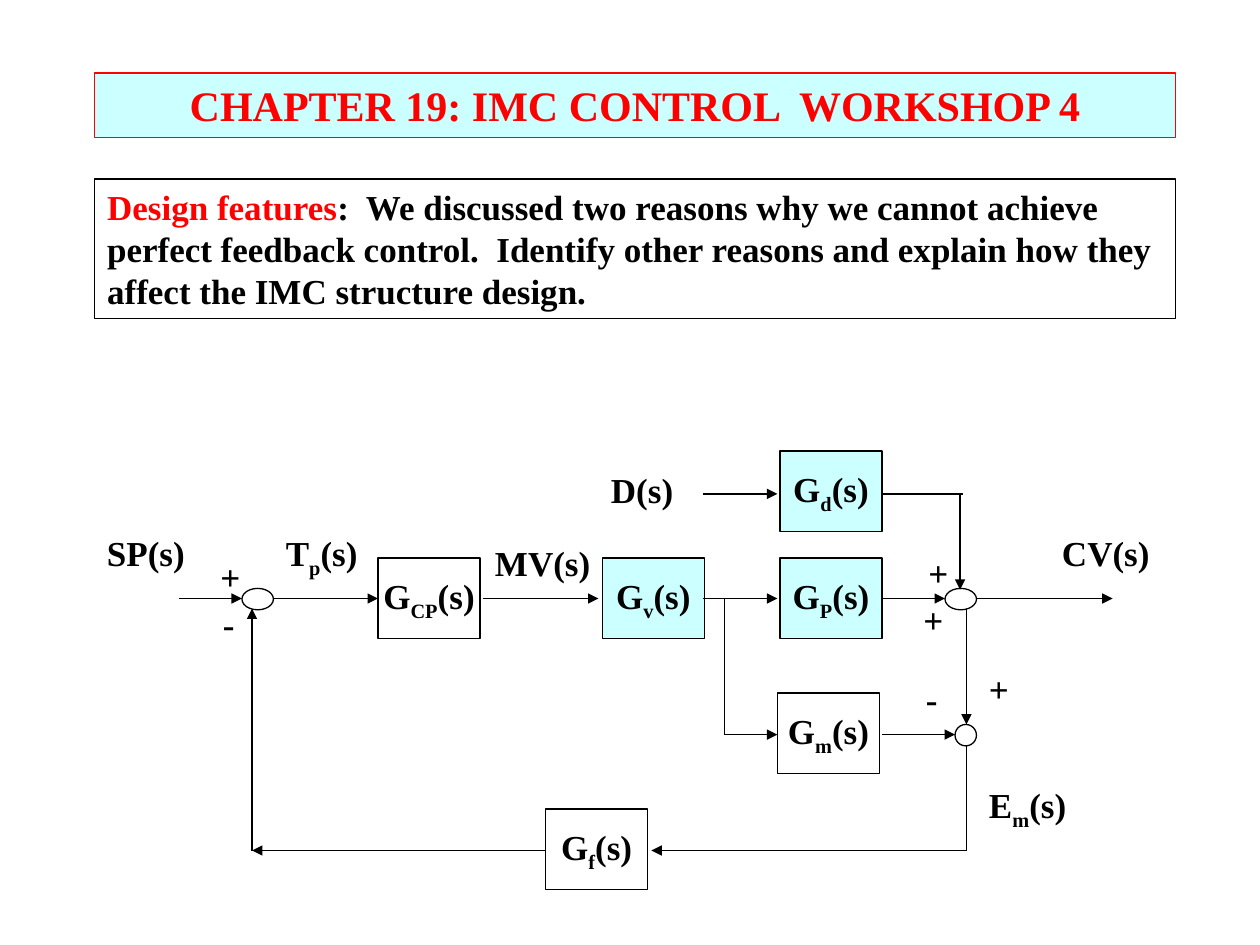
from lxml import etree
from pptx import Presentation
from pptx import util as u
from pptx.dml.color import RGBColor
from pptx.enum import shapes, text
from pptx.oxml.ns import qn

COLORS = {"red": "FF0000", "black": "000000", "aqua": "CCFFFF"}
BOX_WIDTH, BOX_HEIGHT = 0.81, 0.64
SIGNAL_Y, DISTURBANCE_Y, MODEL_Y, FEEDBACK_Y = 4.75, 3.92, 5.83, 6.75
ERROR_X, RETURN_X, BRANCH_X = 7.67, 2, 5.75

BLOCKS = [
    ("G_d_(s)", 6.19, 3.58, "aqua"),
    ("G_P_(s)", 6.19, 4.43, "aqua"),
    ("G_v_(s)", 4.78, 4.43, "aqua"),
    ("G_CP_(s)", 3, 4.43, None),
    ("G_m_(s)", 6.17, 5.5, None),
    ("G_f_(s)", 4.33, 6.42, None),
]
JUNCTIONS = [
    (1.92, 4.67, 0.25, 0.17),
    (7.5, 4.67, 0.25, 0.17),
    (7.58, 5.75, 0.17, 0.17),
]
ARROWS = [
    (1.42, SIGNAL_Y, 1.92, SIGNAL_Y),
    (2.17, SIGNAL_Y, 3, SIGNAL_Y),
    (3.83, SIGNAL_Y, 4.75, SIGNAL_Y),
    (5.58, SIGNAL_Y, 6.17, SIGNAL_Y),
    (7, SIGNAL_Y, 7.5, SIGNAL_Y),
    (7.75, SIGNAL_Y, 8.83, SIGNAL_Y),
    (5.58, DISTURBANCE_Y, 6.17, DISTURBANCE_Y),
    (7.62, 3.93, 7.62, 4.68),
    (BRANCH_X, MODEL_Y, 6.17, MODEL_Y),
    (7, MODEL_Y, 7.58, MODEL_Y),
    (ERROR_X, 4.83, ERROR_X, 5.75),
    (ERROR_X, FEEDBACK_Y, 5.17, FEEDBACK_Y),
    (4.33, FEEDBACK_Y, RETURN_X, FEEDBACK_Y),
    (RETURN_X, FEEDBACK_Y, RETURN_X, 4.83),
]
PLAIN_LINES = [
    (7, DISTURBANCE_Y, 7.64, DISTURBANCE_Y),
    (BRANCH_X, SIGNAL_Y, BRANCH_X, MODEL_Y),
    (ERROR_X, 5.92, ERROR_X, FEEDBACK_Y),
]
LABELS = [
    ("D(s)", 4.75, 3.67, 0.75),
    ("SP(s)", 0.75, 4.17, 0.92),
    ("T_p_(s)", 2.17, 4.17, 1.08),
    ("MV(s)", 3.83, 4.25, 1.08),
    ("CV(s)", 8.33, 4.17, 0.92),
    ("E_m_(s)", 7.75, 6.17, 1.08),
]
SIGNS = [
    ("+", 1.65, 4.36, 0.36),
    ("-", 1.67, 4.73, 0.29),
    ("+", 7.27, 4.33, 0.36),
    ("+", 7.23, 4.7, 0.36),
    ("-", 7.25, 5.33, 0.29),
    ("+", 7.75, 5.25, 0.36),
]


class Diagram:
    font = {"name": "Times New Roman", "bold": True}
    line_width = u.Pt(0.75)

    def __init__(self, page):
        self.page = page

    def color(self, name):
        return RGBColor.from_string(COLORS[name])

    def apply(self, target, values):
        for name, value in values.items():
            setattr(target, name, value)

    def outline(self, item, color="black"):
        self.apply(item.line, {"width": self.line_width})
        item.line.color.rgb = self.color(color)

    def fill(self, item, color):
        if color:
            item.fill.solid()
            item.fill.fore_color.rgb = self.color(color)
        else:
            item.fill.background()

    def add_span(self, para, words, color="black", size=20):
        span = para.add_run()
        span.text = words
        self.apply(span.font, {**self.font, "size": u.Pt(size)})
        span.font.color.rgb = self.color(color)
        return span

    def write_symbol(self, para, symbol):
        for index, part in enumerate(symbol.split("_")):
            span = self.add_span(para, part)
            if index % 2:
                span._r.get_or_add_rPr().set("baseline", "-25000")

    def panel(self, holder, place, spans, size, fill, line, align, anchor):
        names = ("left", "top", "width", "height")
        self.apply(holder, dict(zip(names, map(u.Inches, place))))
        self.fill(holder, fill)
        self.outline(holder, line)
        self.apply(holder.text_frame, {
            "word_wrap": True, "auto_size": text.MSO_AUTO_SIZE.NONE, "vertical_anchor": anchor})
        para = holder.text_frame.paragraphs[0]
        self.apply(para, {"alignment": align, "space_before": u.Pt(0)})
        properties = para._p.get_or_add_pPr()
        for name in ("marL", "indent"):
            properties.set(name, "0")
        etree.SubElement(properties, qn("a:buNone"))
        for words, color in spans:
            self.add_span(para, words, color, size)

    def shape(self, kind, left, top, width, height, fill=None):
        item = self.page.shapes.add_shape(kind, *map(u.Inches, (left, top, width, height)))
        item.shadow.inherit = False
        self.fill(item, fill)
        self.outline(item)
        return item

    def block(self, symbol, left, top, fill):
        box = self.shape(shapes.MSO_SHAPE.RECTANGLE, left, top, BOX_WIDTH, BOX_HEIGHT, fill)
        self.apply(box.text_frame, {
            "word_wrap": False, "vertical_anchor": text.MSO_ANCHOR.MIDDLE})
        para = box.text_frame.paragraphs[0]
        para.alignment = text.PP_ALIGN.CENTER
        self.write_symbol(para, symbol)

    def junction(self, left, top, width, height):
        self.shape(shapes.MSO_SHAPE.OVAL, left, top, width, height)

    def label(self, symbol, left, top, width, wrap=True):
        box = self.page.shapes.add_textbox(*map(u.Inches, (left, top, width, 0.43)))
        box.text_frame.word_wrap = wrap
        self.write_symbol(box.text_frame.paragraphs[0], symbol)

    def connect(self, ends, arrow=False):
        connector = self.page.shapes.add_connector(
            shapes.MSO_CONNECTOR.STRAIGHT, *map(u.Inches, ends))
        self.outline(connector)
        if arrow:
            etree.SubElement(connector.line._get_or_add_ln(), qn("a:tailEnd"), type="triangle")
        etree.SubElement(connector._element.spPr, qn("a:effectLst"))


def main():
    deck = Presentation()
    deck.slide_width, deck.slide_height = u.Inches(10), u.Inches(7.5)
    page = deck.slides.add_slide(deck.slide_layouts[1])
    diagram = Diagram(page)

    diagram.panel(
        page.shapes.title, (0.75, 0.58, 8.58, 0.51),
        [("CHAPTER 19: IMC CONTROL  WORKSHOP 4", "red")],
        24, "aqua", "red", text.PP_ALIGN.CENTER, text.MSO_ANCHOR.MIDDLE)
    diagram.panel(
        page.placeholders[1], (0.75, 1.42, 8.58, 1.11),
        [("Design features", "red"),
         (":  We discussed two reasons why we cannot achieve perfect feedback control.  "
          "Identify other reasons and explain how they affect the IMC structure design.", "black")],
        20, None, "black", text.PP_ALIGN.LEFT, text.MSO_ANCHOR.TOP)

    for block in BLOCKS:
        diagram.block(*block)
    for junction in JUNCTIONS:
        diagram.junction(*junction)
    for ends in ARROWS:
        diagram.connect(ends, arrow=True)
    for ends in PLAIN_LINES:
        diagram.connect(ends)
    for label in LABELS:
        diagram.label(*label)
    for sign in SIGNS:
        diagram.label(*sign, wrap=False)

    deck.save("out.pptx")


if __name__ == "__main__":
    main()
